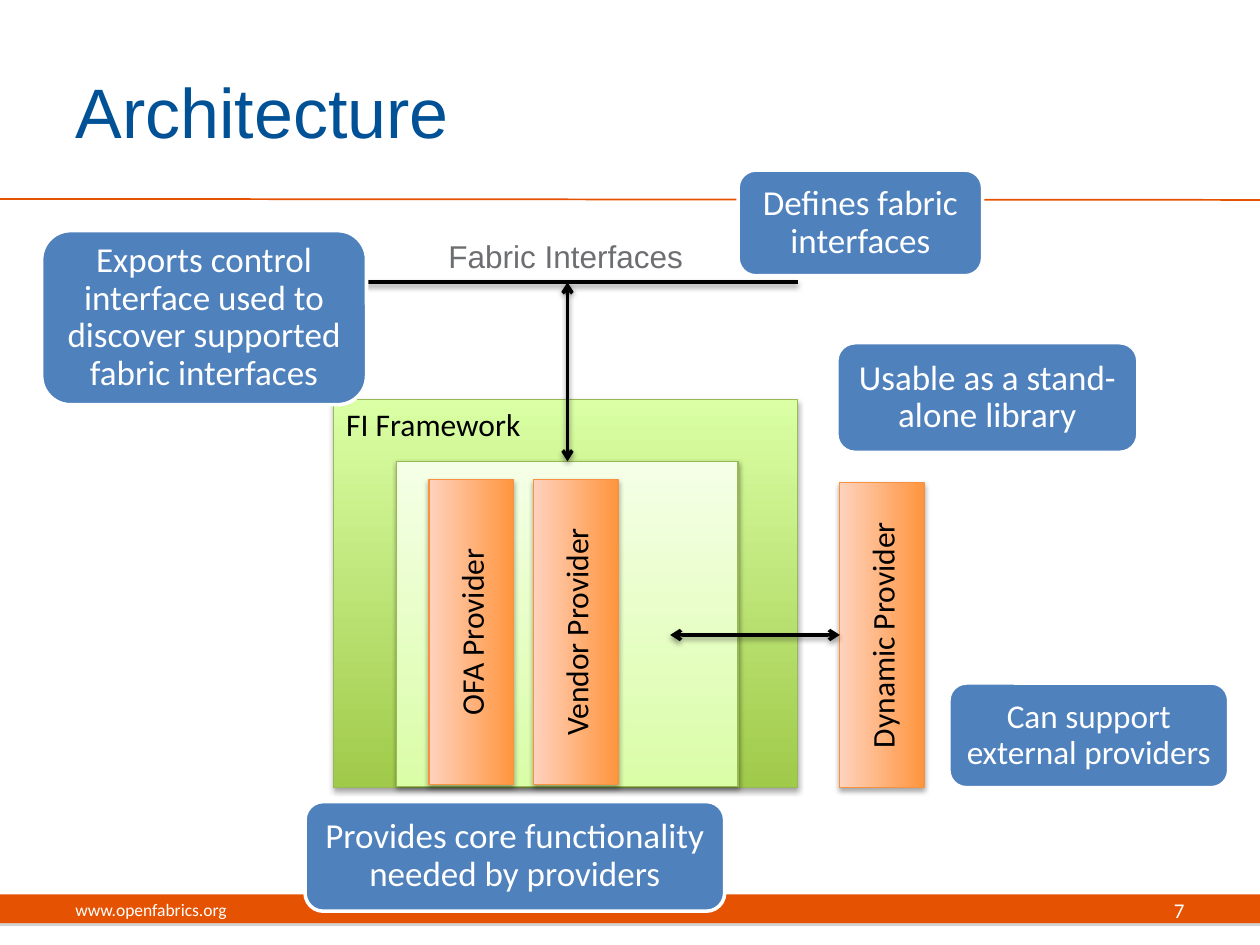
from dataclasses import dataclass
from lxml.etree import SubElement as Sub
from pptx import Presentation
from pptx.dml.color import RGBColor as Rgb
from pptx.enum.shapes import MSO_CONNECTOR as Conn, MSO_SHAPE as Shape
from pptx.enum.text import MSO_ANCHOR as Anchor, PP_ALIGN as Align
from pptx.oxml.ns import qn
from pptx.util import Cm, Pt


@dataclass(frozen=True)
class Theme:
    head: str = "Arial"
    body: str = "Calibri"
    blue: str = "005195"
    orange: str = "E55302"
    gray: str = "6D6E71"
    shade: str = "808080"
    black: str = "000000"
    white: str = "FFFFFF"
    note: str = "4F81BD"
    edge: str = "98B955"
    green: tuple = ("A0CA4A", "DAFFA5")
    pale: tuple = ("DAFDA7", "F5FFE7")
    warm: tuple = ("FF953E", "FFD2BD")
    rim: str = "F69240"
    title: int = 40
    large: int = 20
    text: int = 18
    page: int = 12
    small: int = 10


class Board:
    """Holds the style and the slide being drawn."""

    def __init__(self, slide, theme):
        self.slide = slide
        self.shapes = slide.shapes
        self.theme = theme

    def put(self, frame, text, size, color, font=None,
            align=Align.LEFT, anchor=Anchor.MIDDLE):
        frame.word_wrap = True
        frame.vertical_anchor = anchor
        para = frame.paragraphs[0]
        para.alignment = align
        run = para.add_run()
        run.text = text
        run.font.name = font or self.theme.body
        run.font.size = Pt(size)
        run.font.color.rgb = Rgb.from_string(color)
        return para

    def shade(self, item, color=None, alpha=35, blur=3.1, dist=1.8):
        props = item.element.spPr
        effect = props.find(qn("a:effectLst"))
        if effect is None:
            effect = Sub(props, qn("a:effectLst"))
        drop = Sub(effect, qn("a:outerShdw"), blurRad=str(Pt(blur)),
                   dist=str(Pt(dist)), dir="5400000", rotWithShape="0")
        tone = Sub(drop, qn("a:srgbClr"), val=color or self.theme.black)
        Sub(tone, qn("a:alpha"), val=str(alpha * 1000))

    def title(self, text, *box):
        item = self.shapes.title
        item.left, item.top, item.width, item.height = map(Cm, box)
        look = self.theme
        self.put(item.text_frame, text, look.title, look.blue, look.head)

    def label(self, text, box, size, color, **style):
        item = self.shapes.add_textbox(*map(Cm, box))
        self.put(item.text_frame, text, size, color, **style)

    def block(self, box, fill, edge=None, width=0.75, kind=Shape.RECTANGLE):
        item = self.shapes.add_shape(kind, *map(Cm, box))
        item.shadow.inherit = False
        if isinstance(fill, tuple):
            item.fill.gradient()
            item.fill.gradient_angle = 90
            for spot, (stop, color) in enumerate(
                    zip(item.fill.gradient_stops, fill)):
                stop.color.rgb = Rgb.from_string(color)
                stop.position = spot
        else:
            item.fill.solid()
            item.fill.fore_color.rgb = Rgb.from_string(fill)
        if edge:
            item.line.color.rgb = Rgb.from_string(edge)
            item.line.width = Pt(width)
        else:
            item.line.fill.background()
        return item

    def upright(self, text, x, y, long=6.15, thick=1.7):
        """A bar centred on x, y that reads from bottom to top."""
        look = self.theme
        box = (x - long / 2, y - thick / 2, long, thick)
        item = self.block(box, look.warm, look.rim)
        item.rotation = 270
        self.shade(item)
        self.put(item.text_frame, text, look.text, look.black,
                 align=Align.CENTER)
        return item

    def line(self, start, end, color, width):
        item = self.shapes.add_connector(Conn.STRAIGHT, *map(Cm, start + end))
        item.line.color.rgb = Rgb.from_string(color)
        item.line.width = Pt(width)
        Sub(item.element.spPr, qn("a:effectLst"))
        return item

    def stroke(self, start, end):
        item = self.line(start, end, self.theme.black, 2)
        self.shade(item, alpha=38, dist=1.6)
        return item

    def arrow(self, start, end, goal):
        """A two-way arrow joined to the top site of its goal."""
        item = self.stroke(start, end)
        pen = item.element.spPr.find(qn("a:ln"))
        for tip in ("a:headEnd", "a:tailEnd"):
            Sub(pen, qn(tip), type="arrow")
        item.end_connect(goal, 0)
        # A turned goal has its top site elsewhere, so set the end again
        item.end_x, item.end_y = map(Cm, end)

    def note(self, text, box, size=None):
        look = self.theme
        item = self.block(box, look.note, look.white, 2,
                          Shape.ROUNDED_RECTANGLE)
        frame = item.text_frame
        frame.margin_left = frame.margin_right = Cm(0.2)
        frame.margin_top = frame.margin_bottom = Cm(0.2)
        para = self.put(frame, text, size or look.large, look.white,
                        align=Align.CENTER)
        para.line_spacing = 0.9


def main():
    deck = Presentation()
    deck.slide_width, deck.slide_height = Cm(25.4), Cm(19.05)
    look = Theme()
    board = Board(deck.slides.add_slide(deck.slide_layouts[5]), look)

    # Title, rule and footer
    foot = board.block((0, 18.03, 25.4, 0.58), look.orange)
    board.shade(foot, look.shade, blur=0)
    board.line((0, 4.01), (25.4, 4.03), look.orange, 1)
    board.title("Architecture", 1.27, 0.64, 20.75, 3.18)
    board.label("www.openfabrics.org", (1.27, 17.83, 8.05, 1.02),
                look.small, look.white)
    board.label("7", (18.21, 17.83, 5.92, 1.02), look.page, look.white,
                align=Align.RIGHT)

    # Framework and its inner panel
    left, wide, roof = 6.73, 9.35, 5.69
    frame = board.block((left, 8.05, wide, 7.82), look.green, look.edge)
    board.shade(frame)
    board.put(frame.text_frame, "FI Framework", look.text, look.black,
              anchor=Anchor.TOP)
    panel = board.block((8, 9.3, 6.88, 6.55), look.pale, look.edge)
    board.shade(panel, alpha=38, dist=1.6)

    # Providers
    for name, x in (("OFA Provider", 9.5), ("Vendor Provider", 11.61)):
        board.upright(name, x, 12.74)
    extra = board.upright("Dynamic Provider", 17.78, 12.8)

    # Interface line and arrows
    board.stroke((left, roof), (left + wide, roof))
    board.label("Fabric Interfaces", (left, 4.65, wide, 1.02), look.text,
                look.gray, font=look.head, align=Align.CENTER)
    board.arrow((11.44, roof), (11.44, 9.3), panel)
    board.arrow((13.51, 12.8), (16.93, 12.8), extra)

    # Callouts
    board.note("Usable as a stand-alone library", (16.87, 6.91, 6.07, 2.21))
    board.note("Can support external providers",
               (19.13, 13.77, 5.64, 2.11), 19)
    board.note("Provides core functionality needed by providers",
               (6.15, 16.16, 8.46, 2.21))
    board.note("Exports control interface used to discover supported "
               "fabric interfaces", (0.84, 4.65, 6.55, 3.51))
    board.note("Defines fabric interfaces", (14.88, 3.43, 4.93, 2.13))

    deck.save("out.pptx")


if __name__ == "__main__":
    main()
